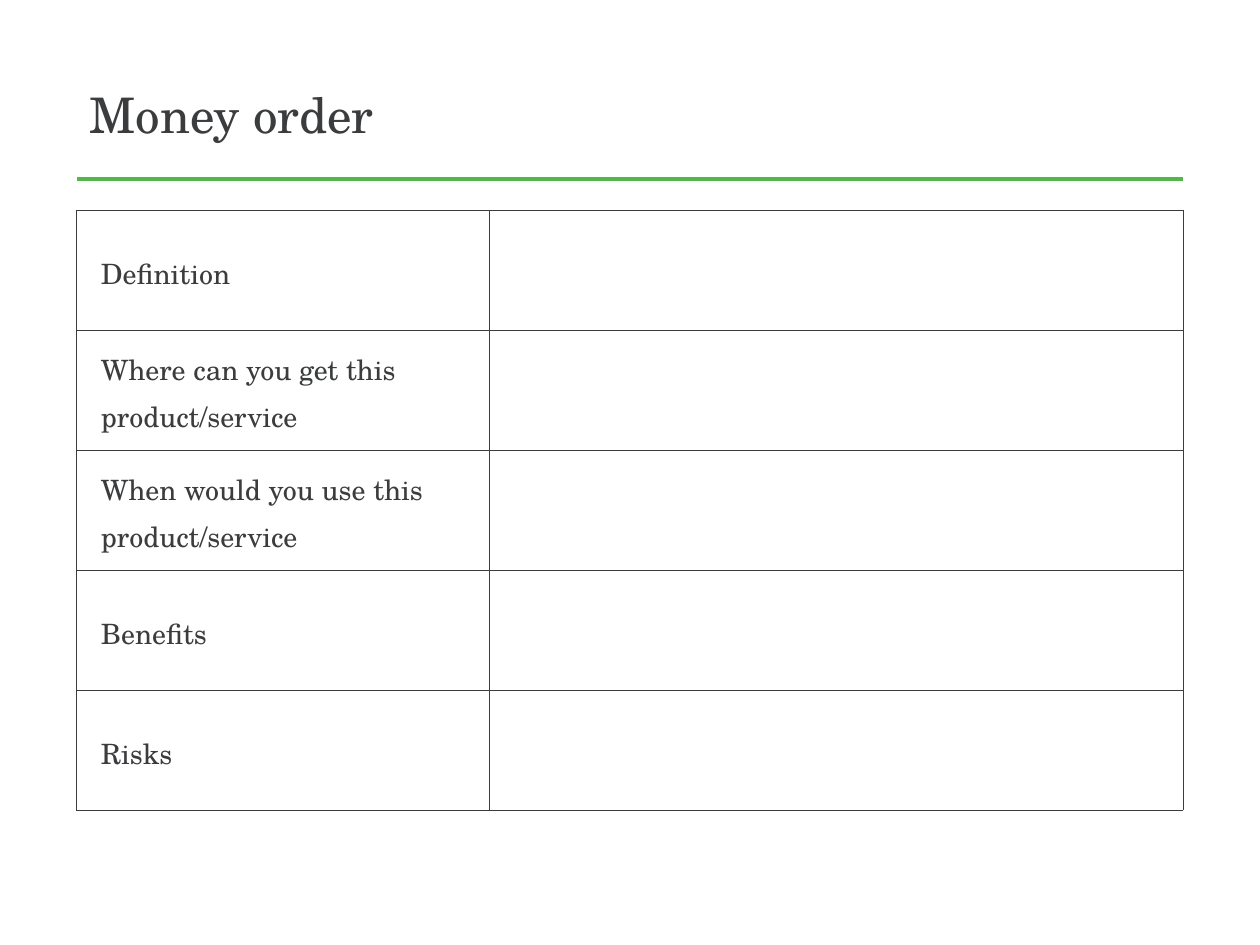
from dataclasses import dataclass

from lxml.etree import SubElement
from pptx import Presentation
from pptx.dml.color import RGBColor
from pptx.enum.shapes import MSO_CONNECTOR as Connector
from pptx.enum.text import MSO_ANCHOR as Anchor, MSO_AUTO_SIZE as AutoSize, PP_ALIGN as Align
from pptx.oxml.ns import qn
from pptx.util import Emu, Pt

PX_PER_INCH = 126
FONT = "TeX Gyre Schola"
COLORS = {"text": "3B3C3E", "rule": "50B748"}
BORDER_WIDTH = Pt(0.25)
BORDER_SIDES = ("a:lnL", "a:lnR", "a:lnT", "a:lnB")


@dataclass(frozen=True)
class Box:
    left: int
    top: int
    width: int
    height: int


@dataclass(frozen=True)
class Topic:
    prompt: str
    answer: str = ""


TITLE_BOX = Box(77, 63, 1108, 102)
TOPICS_BOX = Box(76, 210, 1107, 600)
PROMPT_WIDTH = 413
TOPICS = (
    Topic("Definition"),
    Topic("Where can you get this product/service"),
    Topic("When would you use this product/service"),
    Topic("Benefits"),
    Topic("Risks"),
)


def px(length: int) -> Emu:
    return Emu(round(length * 914400 / PX_PER_INCH))


def place(box: Box) -> tuple:
    return px(box.left), px(box.top), px(box.width), px(box.height)


def style_paragraph(paragraph, size: int) -> None:
    paragraph.alignment = Align.LEFT
    paragraph.font.name = FONT
    paragraph.font.size = Pt(size)
    paragraph.font.color.rgb = RGBColor.from_string(COLORS["text"])


def add_title(slide, text: str) -> None:
    title = slide.shapes.title
    title.left, title.top, title.width, title.height = place(TITLE_BOX)
    frame = title.text_frame
    frame.text = text
    frame.word_wrap = True
    frame.auto_size = AutoSize.NONE
    frame.vertical_anchor = Anchor.MIDDLE
    style_paragraph(frame.paragraphs[0], 28)


def add_rule(slide, left: int, right: int, y: int) -> None:
    rule = slide.shapes.add_connector(Connector.STRAIGHT, px(left), px(y), px(right), px(y))
    rule.line.color.rgb = RGBColor.from_string(COLORS["rule"])
    rule.line.width = Pt(2)
    SubElement(rule._element.spPr, qn("a:effectLst"))


def draw_borders(cell) -> None:
    properties = cell._tc.get_or_add_tcPr()
    for side in BORDER_SIDES:
        border = SubElement(properties, qn(side), w=str(BORDER_WIDTH))
        fill = SubElement(border, qn("a:solidFill"))
        SubElement(fill, qn("a:srgbClr"), val=COLORS["text"])


def fill_cell(cell, text: str) -> None:
    cell.text = text
    cell.vertical_anchor = Anchor.MIDDLE
    cell.margin_left = px(25)
    paragraph = cell.text_frame.paragraphs[0]
    paragraph.line_spacing = 1.15
    style_paragraph(paragraph, 16)
    draw_borders(cell)
    cell.fill.background()


def add_topics(slide, topics: tuple[Topic, ...]) -> None:
    table = slide.shapes.add_table(len(topics), 2, *place(TOPICS_BOX)).table
    table.first_row = False
    table.horz_banding = False
    table.columns[0].width = px(PROMPT_WIDTH)
    table.columns[1].width = px(TOPICS_BOX.width - PROMPT_WIDTH)
    for index, topic in enumerate(topics):
        fill_cell(table.cell(index, 0), topic.prompt)
        fill_cell(table.cell(index, 1), topic.answer)


def main() -> None:
    deck = Presentation()
    deck.slide_width, deck.slide_height = px(1260), px(945)
    slide = deck.slides.add_slide(deck.slide_layouts[5])
    add_rule(slide, left=77, right=1183, y=179)
    add_title(slide, "Money order")
    add_topics(slide, TOPICS)
    deck.save("out.pptx")


if __name__ == "__main__":
    main()
